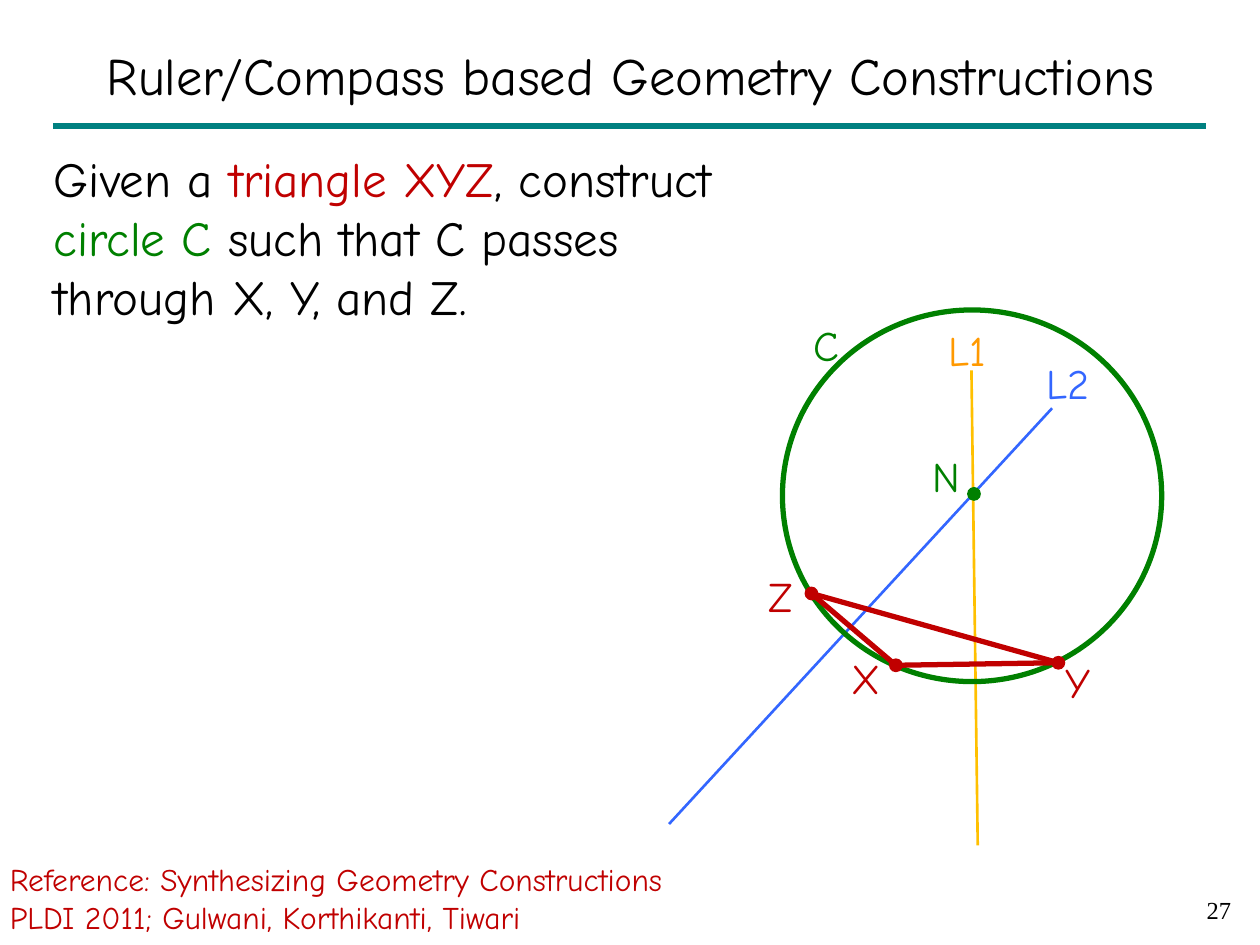
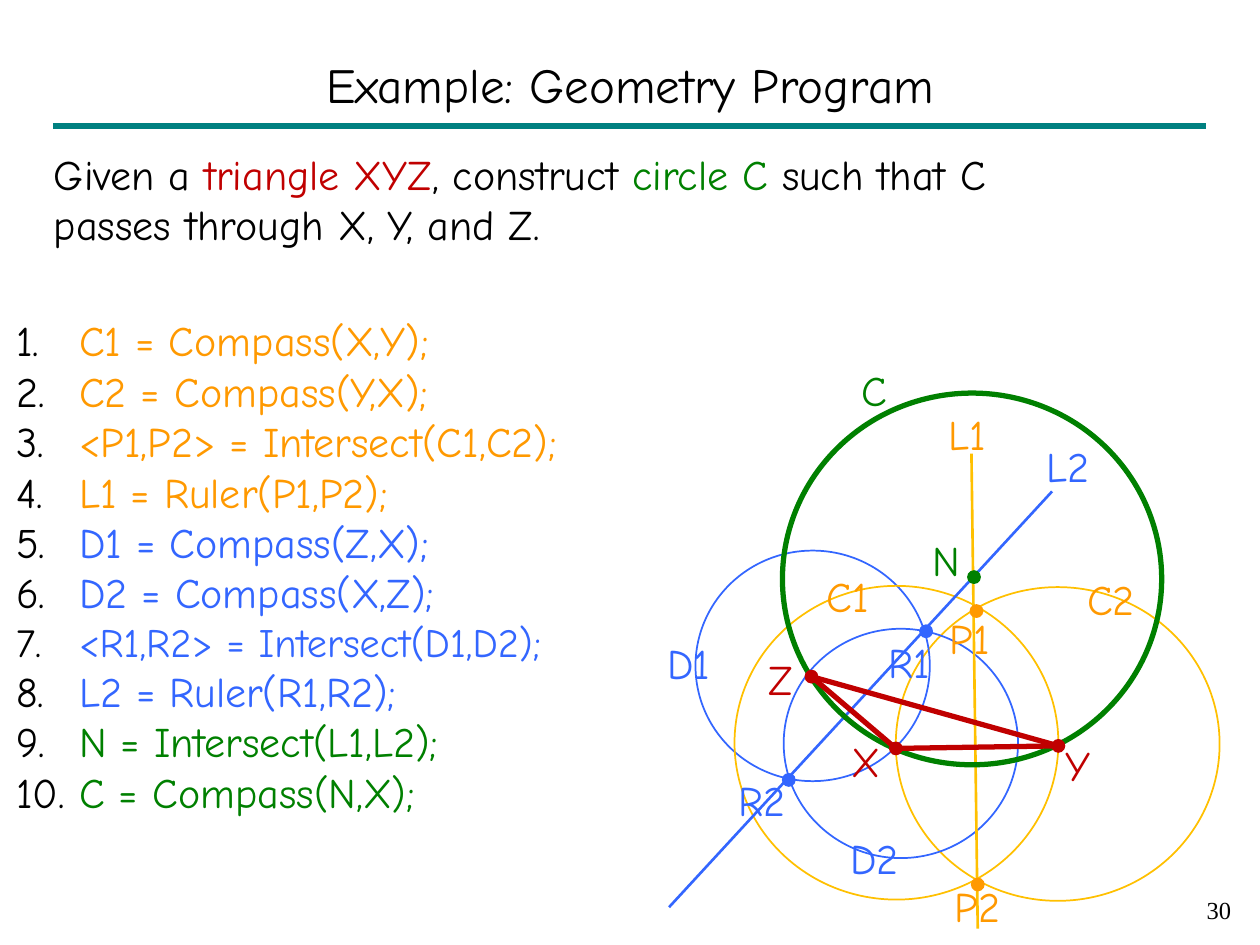
import pptx
import pptx.util
import pptx.dml.color
import pptx.enum.shapes
import pptx.enum.text
import pptx.oxml.ns
from lxml import etree

Inches = pptx.util.Inches
Pt = pptx.util.Pt
SHAPES = pptx.enum.shapes.MSO_SHAPE
ALIGN = pptx.enum.text.PP_ALIGN
ANCHOR = pptx.enum.text.MSO_ANCHOR

# Shared look
COLOURS = {"black": "000000", "red": "C00000", "green": "008000", "teal": "008080",
           "orange": "FF9900", "gold": "FFC000", "blue": "3366FF"}
FONT = "Comic Neue"
NUMBER_FONT = "Times New Roman"
DOT_SIZE = 0.11
LABEL_HEIGHT = 0.5

TASK = [("Given a ", "black"), ("triangle XYZ", "red"), (", construct ", "black"),
        ("circle C", "green"), (" such that C passes through X, Y, and Z.", "black")]

# Figure common to both slides, placed as on the first one
POINTS = {"N": (7.73, 3.92, "green"), "X": (7.11, 5.28, "red"),
          "Y": (8.4, 5.26, "red"), "Z": (6.44, 4.71, "red")}
TRIANGLE = ["XY", "XZ", "ZY"]
RULER_LINES = [((7.71, 2.94), (7.76, 6.71), "gold"),
               ((5.31, 6.54), (8.35, 3.24), "blue")]
CIRCLE_C = (6.21, 2.46, 3.01, 2.95)
LABELS = [("X", 6.66, 5.13, 0.53, "red"), ("Z", 6, 4.48, 0.53, "red"),
          ("Y", 8.36, 5.16, 0.53, "red"), ("L1", 7.43, 2.53, 0.58, "orange"),
          ("L2", 8.21, 2.79, 0.74, "blue"), ("N", 7.3, 3.53, 0.54, "green")]

# First slide
REFERENCE = ["Reference: Synthesizing Geometry Constructions",
             "PLDI 2011; Gulwani, Korthikanti, Tiwari"]

# Second slide: the figure sits lower, with the construction steps added
FIGURE_DROP = 0.66
PROGRAM = [("C1 = Compass(X,Y);", "orange", 24), ("C2 = Compass(Y,X);", "orange", 24),
           ("<P1,P2> = Intersect(C1,C2);", "orange", 24),
           ("L1 = Ruler(P1,P2);", "orange", 24),
           ("D1 = Compass(Z,X);", "blue", 24), ("D2 = Compass(X,Z);", "blue", 24),
           ("<R1,R2> = Intersect(D1,D2);", "blue", 23),
           ("L2 = Ruler(R1,R2);", "blue", 24),
           ("N = Intersect(L1,L2);", "green", 24), ("C = Compass(N,X);", "green", 24)]
COMPASS_CIRCLES = [((7.11, 4.66, 2.57, 2.49), "gold"), ((6.22, 4.99, 1.86, 1.82), "blue"),
                   ((5.52, 4.37, 1.86, 1.83), "blue"), ((5.83, 4.65, 2.57, 2.49), "gold")]
STEP_POINTS = [(7.75, 4.85, "orange"), (7.76, 7.02, "orange"),
               (6.26, 6.19, "blue"), (7.35, 5.01, "blue")]
STEP_LABELS = [("C1", 6.46, 4.48, 0.58, "orange"), ("C2", 8.53, 4.5, 0.67, "orange"),
               ("P1", 7.44, 4.81, 0.58, "orange"), ("P2", 7.48, 6.94, 0.58, "orange"),
               ("D1", 5.2, 5.01, 0.67, "blue"), ("D2", 6.65, 6.56, 0.67, "blue"),
               ("R1", 6.95, 5, 0.58, "blue"), ("R2", 5.76, 6.1, 0.75, "blue")]


def rgb(colour):
    return pptx.dml.color.RGBColor.from_string(COLOURS[colour])


def add_text(slide, box, paragraphs, size, font=FONT, align=ALIGN.LEFT, anchor=ANCHOR.TOP):
    """Each paragraph is a list of (text, colour) runs."""
    shape = slide.shapes.add_textbox(*map(Inches, box))
    frame = shape.text_frame
    frame.word_wrap = True
    frame.vertical_anchor = anchor
    for index, runs in enumerate(paragraphs):
        paragraph = frame.add_paragraph() if index else frame.paragraphs[0]
        paragraph.alignment = align
        for text, colour in runs:
            run = paragraph.add_run()
            run.text = text
            run.font.name = font
            run.font.size = Pt(size)
            run.font.color.rgb = rgb(colour)
    return frame


def add_line(slide, start, end, colour, width):
    line = slide.shapes.add_connector(pptx.enum.shapes.MSO_CONNECTOR.STRAIGHT,
                                      *map(Inches, (*start, *end)))
    line.line.color.rgb = rgb(colour)
    line.line.width = Pt(width)
    properties = line._element.spPr
    etree.SubElement(properties, pptx.oxml.ns.qn("a:effectLst"))


def add_circle(slide, box, colour, width):
    circle = slide.shapes.add_shape(SHAPES.OVAL, *map(Inches, box))
    circle.shadow.inherit = False
    circle.fill.background()
    circle.line.color.rgb = rgb(colour)
    circle.line.width = Pt(width)


def add_dot(slide, x, y, colour):
    box = (x - DOT_SIZE / 2, y - DOT_SIZE / 2, DOT_SIZE, DOT_SIZE)
    dot = slide.shapes.add_shape(SHAPES.FLOWCHART_CONNECTOR, *map(Inches, box))
    dot.shadow.inherit = False
    dot.fill.solid()
    dot.fill.fore_color.rgb = rgb(colour)
    dot.line.fill.background()


def add_label(slide, text, x, y, width, colour):
    add_text(slide, (x, y, width, LABEL_HEIGHT), [[(text, colour)]], 24)


def number_paragraph(paragraph):
    properties = paragraph._p.get_or_add_pPr()
    properties.set("marL", str(Inches(0.5)))
    properties.set("indent", str(-Inches(0.5)))
    bullet_colour = etree.SubElement(properties, pptx.oxml.ns.qn("a:buClr"))
    etree.SubElement(bullet_colour, pptx.oxml.ns.qn("a:srgbClr"), val=COLOURS["black"])
    etree.SubElement(properties, pptx.oxml.ns.qn("a:buFont"), typeface=FONT)
    etree.SubElement(properties, pptx.oxml.ns.qn("a:buAutoNum"), type="arabicPeriod")


def add_base_slide(presentation, title, title_box, title_size, number):
    slide = presentation.slides.add_slide(presentation.slide_layouts[6])
    add_line(slide, (0.42, 1), (9.57, 1), "teal", 4)
    add_text(slide, title_box, [[(title, "black")]], title_size,
             align=ALIGN.CENTER, anchor=ANCHOR.MIDDLE)
    add_text(slide, (7.79, 7.05, 2.08, 0.42), [[(number, "black")]], 14,
             font=NUMBER_FONT, align=ALIGN.RIGHT)
    return slide


def add_figure(slide, drop):
    for (x1, y1), (x2, y2), colour in RULER_LINES:
        add_line(slide, (x1, y1 + drop), (x2, y2 + drop), colour, 1.5)
    left, top, width, height = CIRCLE_C
    add_circle(slide, (left, top + drop, width, height), "green", 3)
    for side in TRIANGLE:
        start, end = [(POINTS[name][0], POINTS[name][1] + drop) for name in side]
        add_line(slide, start, end, "red", 3)
    for text, x, y, width, colour in LABELS:
        add_label(slide, text, x, y + drop, width, colour)
    for x, y, colour in POINTS.values():
        add_dot(slide, x, y + drop, colour)


def build_problem_slide(presentation):
    slide = add_base_slide(presentation, "Ruler/Compass based Geometry Constructions",
                           (0.34, 0.26, 9.33, 0.67), 30, "27")
    add_text(slide, (0.33, 1.13, 5.53, 1.35), [TASK], 28)
    add_figure(slide, 0)
    add_label(slide, "C", 6.36, 2.49, 0.54, "green")
    add_text(slide, (-0.02, 6.78, 10.12, 0.71), [[(line, "red")] for line in REFERENCE], 18)


def build_program_slide(presentation):
    slide = add_base_slide(presentation, "Example: Geometry Program",
                           (0.75, 0.33, 8.5, 0.67), 28, "30")
    add_text(slide, (0.33, 1.13, 8.5, 0.85), [TASK], 24)

    # Numbered program
    frame = add_text(slide, (0.03, 2.45, 4.95, 4.13),
                     [[(step, colour)] for step, colour, size in PROGRAM], 24)
    for paragraph, (step, colour, size) in zip(frame.paragraphs, PROGRAM):
        number_paragraph(paragraph)
        paragraph.runs[0].font.size = Pt(size)

    # Construction
    for box, colour in COMPASS_CIRCLES:
        add_circle(slide, box, colour, 1)
    add_figure(slide, FIGURE_DROP)
    for label in STEP_LABELS:
        add_label(slide, *label)
    for point in STEP_POINTS:
        add_dot(slide, *point)
    add_label(slide, "C", 6.74, 2.84, 0.54, "green")


def main():
    presentation = pptx.Presentation()
    presentation.slide_width = Inches(10)
    presentation.slide_height = Inches(7.5)
    build_problem_slide(presentation)
    build_program_slide(presentation)
    presentation.save("out.pptx")


if __name__ == "__main__":
    main()
